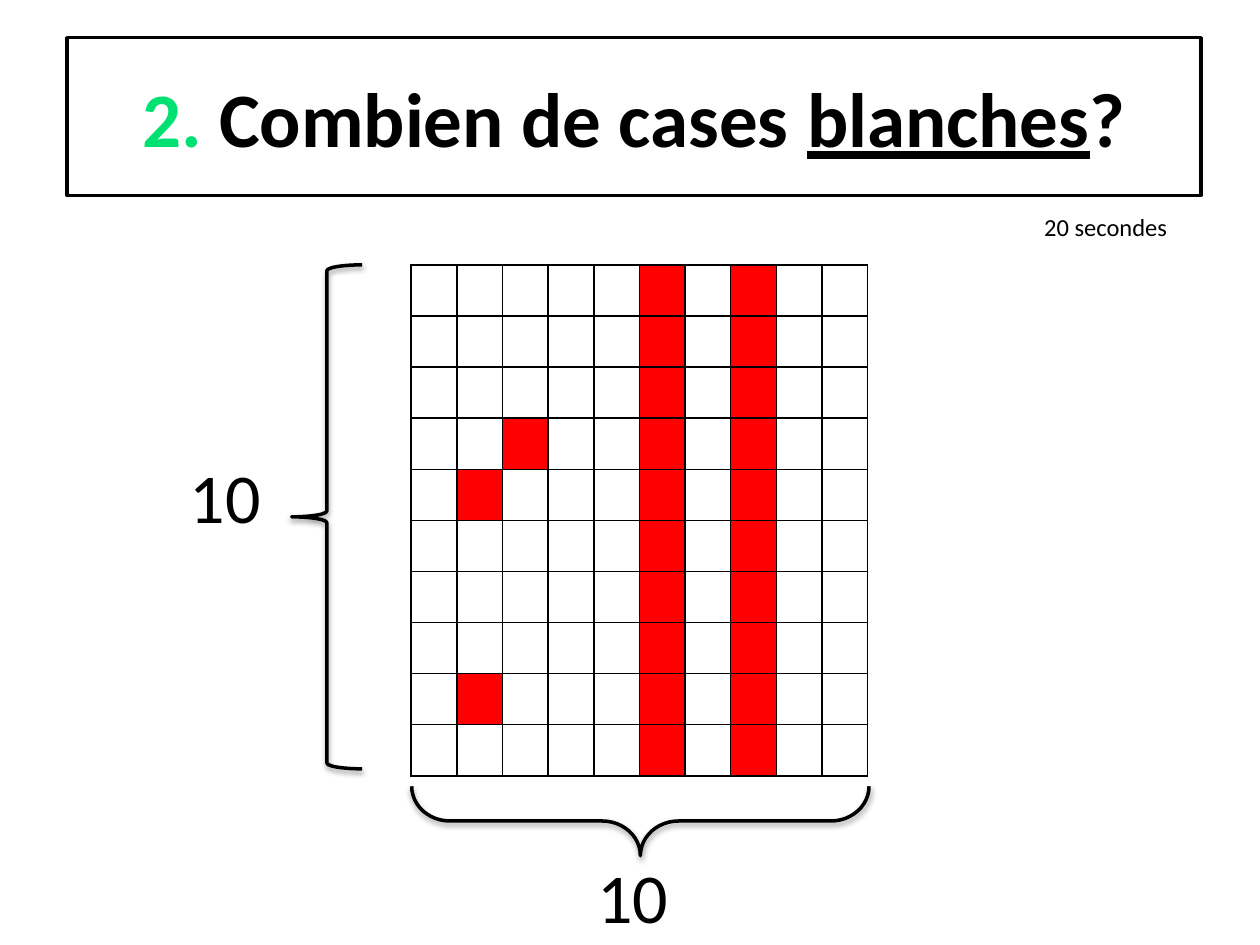
from lxml.etree import SubElement
from pptx import Presentation
from pptx.dml.color import RGBColor
from pptx.enum.shapes import MSO_SHAPE
from pptx.enum.text import MSO_ANCHOR, PP_ALIGN
from pptx.oxml import parse_xml
from pptx.oxml.ns import nsdecls, qn
from pptx.util import Cm, Pt

BLACK, WHITE, RED, GREEN = "000000", "FFFFFF", "FF0000", "00E172"
GRID_SIZE = 10
RED_COLUMNS = {5, 7}
RED_CELLS = {(3, 2), (4, 1), (8, 1)}


def color(hex_string):
    return RGBColor.from_string(hex_string)


class SlideBuilder:
    font_name = "Calibri"
    line_width = Pt(2)

    def __init__(self, slide):
        self.slide = slide

    def style_run(self, run, size, hex_string=BLACK, bold=False):
        run.font.name = self.font_name
        run.font.size = Pt(size)
        run.font.bold = bold
        run.font.color.rgb = color(hex_string)

    def outline(self, shape):
        shape.line.color.rgb = color(BLACK)
        shape.line.width = self.line_width

    def title(self, left, top, width, height, parts):
        """Draw a framed title; parts are (text, colour, underlined)."""
        box = self.slide.shapes.add_shape(
            MSO_SHAPE.RECTANGLE, Cm(left), Cm(top), Cm(width), Cm(height))
        box.shadow.inherit = False
        box.fill.solid()
        box.fill.fore_color.rgb = color(WHITE)
        self.outline(box)
        box.text_frame.vertical_anchor = MSO_ANCHOR.MIDDLE
        para = box.text_frame.paragraphs[0]
        para.alignment = PP_ALIGN.CENTER
        for text, hex_string, underlined in parts:
            run = para.add_run()
            run.text = text
            self.style_run(run, 44, hex_string, bold=True)
            run.font.underline = underlined

    def label(self, left, top, width, height, text, size, wrap=False):
        box = self.slide.shapes.add_textbox(
            Cm(left), Cm(top), Cm(width), Cm(height))
        box.text_frame.word_wrap = wrap
        box.text_frame.text = text
        self.style_run(box.text_frame.paragraphs[0].runs[0], size)

    def brace(self, left, top, width, height, rotation=0, curve=0.0833):
        brace = self.slide.shapes.add_shape(
            MSO_SHAPE.LEFT_BRACE, Cm(left), Cm(top), Cm(width), Cm(height))
        brace.rotation = rotation
        brace.adjustments[0] = curve
        brace.fill.background()
        self.outline(brace)
        # Soft shadow straight below
        brace._element.spPr.append(parse_xml(
            f'<a:effectLst {nsdecls("a")}>'
            '<a:outerShdw blurRad="40000" dist="20000" dir="5400000" rotWithShape="0">'
            '<a:srgbClr val="000000"><a:alpha val="38000"/></a:srgbClr>'
            '</a:outerShdw></a:effectLst>'))

    def cell_borders(self, cell):
        properties = cell._tc.get_or_add_tcPr()
        for side in ("a:lnL", "a:lnR", "a:lnT", "a:lnB"):
            border = SubElement(properties, qn(side), w=str(Pt(1)))
            fill = SubElement(border, qn("a:solidFill"))
            SubElement(fill, qn("a:srgbClr"), val=BLACK)

    def grid(self, left, top, column_width, row_height):
        table = self.slide.shapes.add_table(
            GRID_SIZE, GRID_SIZE, Cm(left), Cm(top),
            Cm(column_width * GRID_SIZE), Cm(row_height * GRID_SIZE)).table
        table.first_row = False
        table.horz_banding = False
        for row in range(GRID_SIZE):
            for column in range(GRID_SIZE):
                cell = table.cell(row, column)
                is_red = column in RED_COLUMNS or (row, column) in RED_CELLS
                self.cell_borders(cell)
                cell.fill.solid()
                cell.fill.fore_color.rgb = color(RED if is_red else WHITE)


def main():
    deck = Presentation()
    deck.slide_width, deck.slide_height = Cm(25.4), Cm(19.05)
    page = SlideBuilder(deck.slides.add_slide(deck.slide_layouts[6]))

    # Question
    page.title(1.35, 0.76, 22.86, 3.18, [
        ("2.", GREEN, False),
        (" Combien de cases ", BLACK, False),
        ("blanches", BLACK, True),
        ("?", BLACK, False),
    ])

    # Grid of squares
    page.grid(8.29, 5.34, 0.92, 1.03)

    # Row count
    page.brace(5.88, 5.34, 1.42, 10.16)
    page.label(3.58, 9.02, 1.96, 1.96, "10", 40)

    # Column count
    page.brace(12.21, 11.94, 1.4, 9.22, rotation=270, curve=0.55)
    page.label(11.79, 17.09, 1.96, 1.96, "10", 40)

    # Time allowed
    page.label(20.8, 4.14, 3.07, 0.86, "20 secondes", 14, wrap=True)

    deck.save("out.pptx")


if __name__ == "__main__":
    main()
